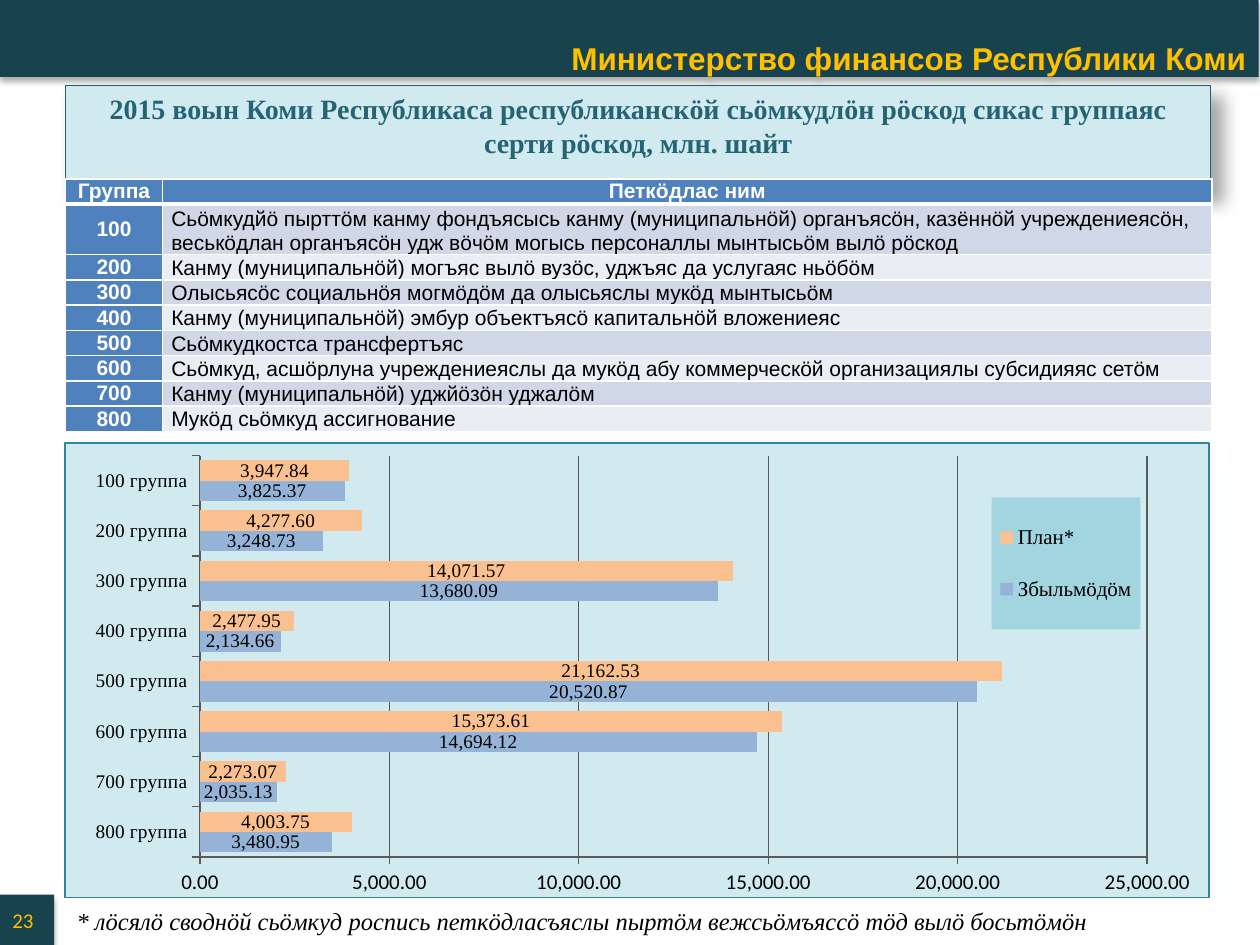
import pptx
import pptx.chart.data
import pptx.dml.color
import pptx.enum.chart
import pptx.enum.shapes
import pptx.enum.text
import pptx.oxml
import pptx.oxml.ns
import pptx.util
from pptx.dml.color import RGBColor
from pptx.enum.text import MSO_ANCHOR, PP_ALIGN
from pptx.util import Inches, Pt

MINISTRY = "Министерство финансов Республики Коми"
TITLE = ("2015 воын Коми Республикаса республиканскӧй сьӧмкудлӧн рӧскод "
         "сикас группаяс серти рӧскод, млн. шайт")
FOOTNOTE = ("* лӧсялӧ своднӧй сьӧмкуд роспись петкӧдласъяслы пыртӧм "
            "вежсьӧмъяссӧ тӧд вылӧ босьтӧмӧн")
PAGE = "23"
HEADINGS = ("Группа", "Петкӧдлас ним")
PLAN, ACTUAL = "План*", "Збыльмӧдӧм"
# group, name, plan, actual
GROUPS = [
    ("100", "Сьӧмкудйӧ пырттӧм канму фондъясысь канму (муниципальнӧй) органъясӧн, "
            "казённӧй учреждениеясӧн, веськӧдлан органъясӧн удж вӧчӧм могысь "
            "персоналлы мынтысьӧм вылӧ рӧскод", 3947.84, 3825.37),
    ("200", "Канму (муниципальнӧй) могъяс вылӧ вузӧс, уджъяс да услугаяс ньӧбӧм",
     4277.60, 3248.73),
    ("300", "Олысьясӧс социальнӧя могмӧдӧм да олысьяслы мукӧд мынтысьӧм",
     14071.57, 13680.09),
    ("400", "Канму (муниципальнӧй) эмбур объектъясӧ капитальнӧй вложениеяс",
     2477.95, 2134.66),
    ("500", "Сьӧмкудкостса трансфертъяс", 21162.53, 20520.87),
    ("600", "Сьӧмкуд, асшӧрлуна учреждениеяслы да мукӧд абу коммерческӧй "
            "организациялы субсидияяс сетӧм", 15373.61, 14694.12),
    ("700", "Канму (муниципальнӧй) уджйӧзӧн уджалӧм", 2273.07, 2035.13),
    ("800", "Мукӧд сьӧмкуд ассигнование", 4003.75, 3480.95),
]

WHITE = RGBColor(0xFF, 0xFF, 0xFF)
BLACK = RGBColor(0, 0, 0)
NAVY = RGBColor(0x18, 0x42, 0x4E)
GOLD = RGBColor(0xFF, 0xC0, 0x00)
PALE = RGBColor(0xD1, 0xEA, 0xF0)
TITLE_LINE = RGBColor(0x20, 0x63, 0x75)
TITLE_TEXT = RGBColor(0x25, 0x64, 0x74)
TABLE_BLUE = RGBColor(0x4F, 0x81, 0xBD)
BANDS = (RGBColor(0xD0, 0xD8, 0xE8), RGBColor(0xE9, 0xED, 0xF4))
LEGEND_FILL = RGBColor(0xA3, 0xD5, 0xE1)
CHART_LINE = RGBColor(0x31, 0x85, 0x9B)
GRID = RGBColor(0x59, 0x59, 0x59)
SERIES_COLORS = (RGBColor(0x95, 0xB3, 0xD7), RGBColor(0xFA, 0xC0, 0x90))
SERIF, SANS = "Times New Roman", "Arial"
NUMBERS = "#,##0.00"


def style(font, name, size, color=BLACK, bold=False, italic=False):
    font.name, font.size, font.bold, font.italic = name, Pt(size), bold, italic
    font.color.rgb = color


def write(frame, text, align, *font):
    paragraph = frame.paragraphs[0]
    paragraph.text, paragraph.alignment = text, align
    style(paragraph.font, *font)


def place(shape, left, top, width, height):
    shape.left, shape.top = Inches(left), Inches(top)
    shape.width, shape.height = Inches(width), Inches(height)


def add_shadow(shape, alpha, blur, distance, angle):
    shape.shadow.inherit = False
    effects = shape._element.spPr.find(pptx.oxml.ns.qn("a:effectLst"))
    effects.append(pptx.oxml.parse_xml(
        f'<a:outerShdw {pptx.oxml.ns.nsdecls("a")} blurRad="{Pt(blur)}" '
        f'dist="{Pt(distance)}" dir="{angle * 60000}" algn="tl" rotWithShape="0">'
        f'<a:srgbClr val="000000"><a:alpha val="{alpha * 1000}"/></a:srgbClr>'
        '</a:outerShdw>'))


def add_band(slide, *box):
    band = slide.shapes.add_shape(pptx.enum.shapes.MSO_SHAPE.RECTANGLE,
                                  *map(Inches, box))
    band.fill.solid()
    band.fill.fore_color.rgb = NAVY
    band.line.fill.background()
    add_shadow(band, 32, 3.5, 2.2, 90)
    return band


def fill_cell(cell, text, fill, align, anchor, color, bold, bottom_border=1):
    cell.margin_left = cell.margin_right = Inches(0.07)
    cell.margin_top = cell.margin_bottom = 0
    cell.vertical_anchor = anchor
    for side, width in zip("LRTB", (1, 1, 1, bottom_border)):
        cell._tc.get_or_add_tcPr().append(pptx.oxml.parse_xml(
            f'<a:ln{side} {pptx.oxml.ns.nsdecls("a")} w="{Pt(width)}">'
            f'<a:solidFill><a:srgbClr val="{WHITE}"/></a:solidFill></a:ln{side}>'))
    cell.fill.solid()
    cell.fill.fore_color.rgb = fill
    write(cell.text_frame, text, align, SANS, 12, color, bold)


def add_group_table(slide):
    table = slide.shapes.add_table(len(GROUPS) + 1, 2, Inches(0.52), Inches(1.42),
                                   Inches(9.1), Inches(2)).table
    for column, width in zip(table.columns, (0.77, 8.33)):
        column.width = Inches(width)
    for index, row in enumerate(table.rows):
        row.height = Inches(0.4 if index == 1 else 0.2)
    head = (TABLE_BLUE, PP_ALIGN.CENTER, MSO_ANCHOR.MIDDLE, WHITE, True)
    for column, heading in enumerate(HEADINGS):
        fill_cell(table.cell(0, column), heading, *head, bottom_border=3)
    for row, (group, name, _, _) in enumerate(GROUPS, 1):
        fill_cell(table.cell(row, 0), group, *head)
        fill_cell(table.cell(row, 1), name, BANDS[(row - 1) % 2], PP_ALIGN.LEFT,
                  MSO_ANCHOR.BOTTOM, BLACK, False)


def manual_layout(x, y, width, height, target=""):
    return pptx.oxml.parse_xml(
        f'<c:layout {pptx.oxml.ns.nsdecls("c")}><c:manualLayout>{target}'
        '<c:xMode val="edge"/><c:yMode val="edge"/>'
        f'<c:x val="{x}"/><c:y val="{y}"/><c:w val="{width}"/><c:h val="{height}"/>'
        '</c:manualLayout></c:layout>')


def area_format(fill, line=None):
    outline = (f'<a:ln w="{Pt(0.75)}"><a:solidFill><a:srgbClr val="{line}"/>'
               '</a:solidFill></a:ln>' if line else "")
    return pptx.oxml.parse_xml(
        f'<c:spPr {pptx.oxml.ns.nsdecls("c", "a")}><a:solidFill>'
        f'<a:srgbClr val="{fill}"/></a:solidFill>{outline}</c:spPr>')


def add_spending_chart(slide):
    data = pptx.chart.data.CategoryChartData(number_format=NUMBERS)
    upward = GROUPS[::-1]
    data.categories = [f"{group[0]} группа" for group in upward]
    data.add_series(ACTUAL, [group[3] for group in upward])
    data.add_series(PLAN, [group[2] for group in upward])
    chart = slide.shapes.add_chart(
        pptx.enum.chart.XL_CHART_TYPE.BAR_CLUSTERED, Inches(0.51), Inches(3.51),
        Inches(9.09), Inches(3.62), data).chart
    chart.has_title = False
    style(chart.font, "Calibri", 18)

    bars = chart.plots[0]
    bars.gap_width, bars.overlap, bars.vary_by_categories = 46, 0, False
    for series, color in zip(bars.series, SERIES_COLORS):
        series.format.fill.solid()
        series.format.fill.fore_color.rgb = color
        labels = series.data_labels
        labels.show_value = True
        labels.number_format, labels.number_format_is_linked = NUMBERS, False
        labels.position = pptx.enum.chart.XL_LABEL_POSITION.CENTER
        style(labels.font, SERIF, 11)

    amounts = chart.value_axis
    amounts.minimum_scale, amounts.maximum_scale, amounts.major_unit = 0, 25000, 5000
    amounts.has_major_gridlines = True
    amounts.tick_labels.number_format = NUMBERS
    amounts.tick_labels.number_format_is_linked = False
    for axis, font, size in ((chart.category_axis, SERIF, 11), (amounts, "Calibri", 12)):
        axis.major_tick_mark = pptx.enum.chart.XL_TICK_MARK.OUTSIDE
        axis.format.line.color.rgb = GRID
        style(axis.tick_labels.font, font, size)
    amounts.major_gridlines.format.line.color.rgb = GRID

    chart.has_legend = True
    legend = chart.legend
    legend.position = pptx.enum.chart.XL_LEGEND_POSITION.RIGHT
    legend.include_in_layout = False
    style(legend.font, SERIF, 12)
    qn = pptx.oxml.ns.qn
    legend._element.find(qn("c:legendPos")).addnext(manual_layout(0.81, 0.12, 0.13, 0.29))
    legend._element.find(qn("c:overlay")).addnext(area_format(LEGEND_FILL))

    space = chart._chartSpace
    plot_area = space.chart.plotArea
    for layout in plot_area.findall(qn("c:layout")):
        plot_area.remove(layout)
    plot_area.insert(0, manual_layout(0.118, 0.028, 0.828, 0.883,
                                      '<c:layoutTarget val="inner"/>'))
    space.chart.addnext(area_format(PALE, CHART_LINE))


def main():
    deck = pptx.Presentation()
    deck.slide_width, deck.slide_height = Inches(10), Inches(7.5)
    slide = deck.slides.add_slide(deck.slide_layouts[5])

    banner = add_band(slide, 0, -0.01, 9.99, 0.62).text_frame
    banner.vertical_anchor, banner.margin_bottom = MSO_ANCHOR.BOTTOM, 0
    write(banner, MINISTRY, PP_ALIGN.RIGHT, SANS, 18, GOLD, True)
    page = add_band(slide, 0, 7.1, 0.43, 0.4).text_frame
    write(page, PAGE, PP_ALIGN.LEFT, "Calibri", 12, GOLD)

    title = slide.shapes.title
    place(title, 0.52, 0.68, 9.09, 0.64)
    title.fill.solid()
    title.fill.fore_color.rgb = PALE
    title.line.color.rgb, title.line.width = TITLE_LINE, Pt(0.75)
    add_shadow(title, 35, 10.2, 8, 45)
    title.text_frame.vertical_anchor = MSO_ANCHOR.TOP
    title.text_frame.auto_size = pptx.enum.text.MSO_AUTO_SIZE.SHAPE_TO_FIT_TEXT
    write(title.text_frame, TITLE, PP_ALIGN.CENTER, SERIF, 16, TITLE_TEXT, True)

    add_spending_chart(slide)
    add_group_table(slide)

    footnote = slide.shapes.add_textbox(Inches(0.51), Inches(7.14), Inches(9.07),
                                        Inches(0.34)).text_frame
    footnote.word_wrap = True
    write(footnote, FOOTNOTE, PP_ALIGN.LEFT, SERIF, 14, BLACK, False, True)
    deck.save("out.pptx")


if __name__ == "__main__":
    main()
